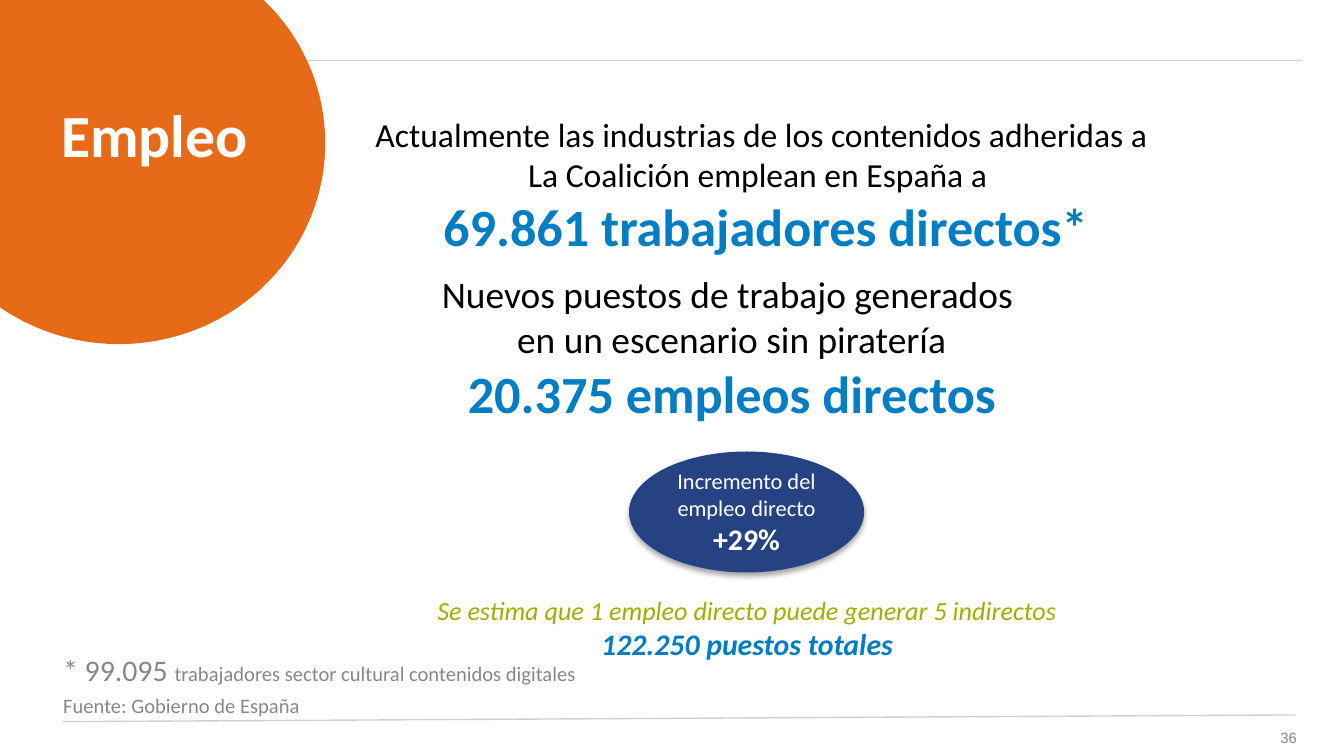
import pptx
import pptx.util
import pptx.dml.color
import pptx.enum.shapes
import pptx.enum.text
import pptx.oxml
import pptx.oxml.ns
import lxml.etree

Inches = pptx.util.Inches
ALIGN = pptx.enum.text.PP_ALIGN
ANCHOR = pptx.enum.text.MSO_ANCHOR
OVAL = pptx.enum.shapes.MSO_SHAPE.OVAL
BLACK, WHITE, BLUE, GRAY = "000000", "FFFFFF", "007DC3", "8E8581"
NAVY, GREEN, ORANGE, RULE = "264283", "A2AD00", "E55A00", "D2CECD"


def color(hex_value):
    return pptx.dml.color.RGBColor.from_string(hex_value)


def drawing_element(parent, tag, **attributes):
    element = lxml.etree.SubElement(parent, pptx.oxml.ns.qn(tag))
    for name, value in attributes.items():
        element.set(name, str(value))
    return element


def run_format(size, hex_value, **extras):
    return {"size": pptx.util.Pt(size), "color": hex_value, "name": "Calibri", **extras}


def write_text(shape, paragraphs, align=ALIGN.CENTER, anchor=ANCHOR.TOP,
               insets=(0.1, 0.05), spacing=None, line_spacing=None):
    frame = shape.text_frame
    horizontal, vertical = map(Inches, insets)
    settings = {"word_wrap": True, "vertical_anchor": anchor,
                "auto_size": pptx.enum.text.MSO_AUTO_SIZE.NONE,
                "margin_left": horizontal, "margin_right": horizontal,
                "margin_top": vertical, "margin_bottom": vertical}
    for name, value in settings.items():
        setattr(frame, name, value)
    for index, runs in enumerate(paragraphs):
        paragraph = frame.add_paragraph() if index else frame.paragraphs[0]
        paragraph.alignment = align
        paragraph.line_spacing = line_spacing
        if index and spacing:
            paragraph.space_before = pptx.util.Pt(spacing)
        for text, font_format in runs:
            for line_index, line in enumerate(text.split("\n")):
                if line_index:
                    paragraph.add_line_break()
                if line:
                    run = paragraph.add_run()
                    run.text = line
                    for name, value in font_format.items():
                        if name == "color":
                            run.font.color.rgb = color(value)
                        else:
                            setattr(run.font, name, value)


def add_text(shapes, box, paragraphs, **options):
    text_box = shapes.add_textbox(*map(Inches, box))
    write_text(text_box, paragraphs, **options)


def add_oval(shapes, box, hex_value):
    oval = shapes.add_shape(OVAL, *map(Inches, box))
    oval.shadow.inherit = False
    oval.fill.solid()
    oval.fill.fore_color.rgb = color(hex_value)
    oval.line.fill.background()
    return oval


def add_rule(slide, start, end):
    connector = slide.shapes.add_connector(
        pptx.enum.shapes.MSO_CONNECTOR.STRAIGHT, *map(Inches, start + end))
    connector.line.color.rgb = color(RULE)
    connector.line.width = pptx.util.Pt(0.75)
    drawing_element(connector.element.spPr, "a:effectLst")


def add_headline(slide, box):
    title = slide.shapes.title
    title.left, title.top, title.width, title.height = map(Inches, box)
    write_text(title, [[
        ("Actualmente las industrias de los contenidos adheridas a \n"
         "La Coalición emplean en España a  \n", run_format(18, BLACK)),
        ("69.861 trabajadores directos*", run_format(28, BLUE, bold=True))]],
        anchor=ANCHOR.MIDDLE, insets=(0.04, 0.04))


def add_new_jobs(slide, box):
    plain = run_format(20, BLACK)
    add_text(slide.shapes, box, [
        [("Nuevos puestos de trabajo generados ", plain)],
        [("en un escenario sin piratería\n", plain),
         ("20.375 empleos directos", run_format(28, BLUE, bold=True))]])


def add_increase_badge(slide, box):
    badge = add_oval(slide.shapes, box, NAVY)
    effects = badge.element.spPr.find(pptx.oxml.ns.qn("a:effectLst"))
    shadow = drawing_element(effects, "a:outerShdw", blurRad=pptx.util.Pt(3.1),
                             dist=pptx.util.Pt(1.8), dir=5400000, rotWithShape=0)
    shadow_color = drawing_element(shadow, "a:srgbClr", val=BLACK)
    drawing_element(shadow_color, "a:alpha", val=35000)
    write_text(badge, [[("Incremento del empleo directo", run_format(12, WHITE))],
                       [("+29%", run_format(16, WHITE, bold=True))]],
               anchor=ANCHOR.MIDDLE, insets=(0, 0.05))


def add_estimate(slide, box):
    add_text(slide.shapes, box, [
        [("Se estima que 1 empleo directo puede generar 5 indirectos",
          run_format(14, GREEN, italic=True))],
        [("122.250 puestos totales", run_format(16, BLUE, italic=True, bold=True))]])


def add_section_circle(slide, box):
    left, top, width, height = box
    group = slide.shapes.add_group_shape()
    circle = add_oval(group.shapes, box, ORANGE)
    fill_color = circle.element.spPr.find(
        pptx.oxml.ns.qn("a:solidFill")).find(pptx.oxml.ns.qn("a:srgbClr"))
    drawing_element(fill_color, "a:alpha", val=90000)
    add_text(group.shapes, (left + 0.69, top + 1.22, width - 0.85, 0.48),
             [[("Empleo", run_format(32, WHITE, bold=True))]],
             anchor=ANCHOR.MIDDLE, insets=(0, 0), line_spacing=0.9)


def add_footnote(slide, box):
    small = run_format(11, GRAY)
    add_text(slide.shapes, box, [
        [("* 99.095 ", run_format(16, GRAY)),
         ("trabajadores sector cultural contenidos digitales", small)],
        [("Fuente: Gobierno de España", small)]],
        align=ALIGN.LEFT, insets=(0, 0), spacing=3)


def add_page_number(slide, box):
    add_text(slide.shapes, box, [[("36", run_format(8, GRAY) | {"name": "Arial"})]],
             align=ALIGN.RIGHT, anchor=ANCHOR.MIDDLE, insets=(0, 0))


def main():
    presentation = pptx.Presentation()
    presentation.slide_width = Inches(10)
    presentation.slide_height = presentation.slide_width * 9 // 16
    slide = presentation.slides.add_slide(presentation.slide_layouts[5])
    add_page_number(slide, (8.23, 5.41, 1.42, 0.16))
    add_headline(slide, (2.02, 0.8, 7.35, 1.16))
    add_estimate(slide, (2.96, 4.37, 5.2, 0.61))
    add_increase_badge(slide, (4.68, 3.36, 1.75, 0.9))
    add_new_jobs(slide, (2.26, 1.97, 6.37, 1.28))
    add_rule(slide, (0.47, 5.37), (9.64, 5.32))
    add_rule(slide, (1.94, 0.45), (9.69, 0.45))
    add_section_circle(slide, (-0.65, -0.43, 3.07, 2.99))
    add_footnote(slide, (0.47, 4.85, 4.22, 0.5))
    presentation.save("out.pptx")


if __name__ == "__main__":
    main()
